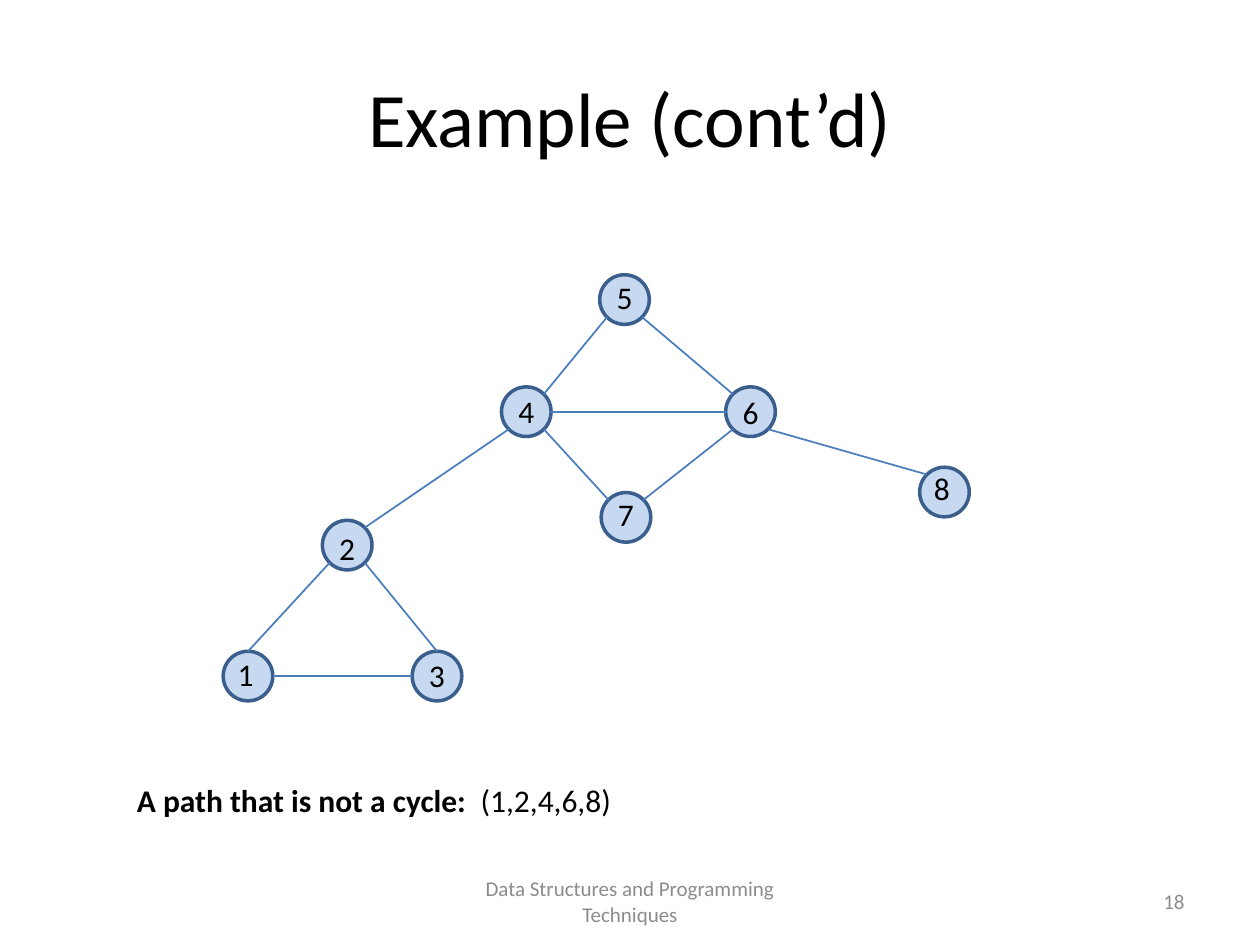
"""Build a slide showing a graph with a path that is not a cycle."""
import math

import pptx
import pptx.enum.shapes
import pptx.enum.text
import pptx.oxml
import pptx.util

Cm = pptx.util.Cm
ALIGN = pptx.enum.text.PP_ALIGN
ANCHOR = pptx.enum.text.MSO_ANCHOR

COLORS = {"node": "C6D9F1", "outline": "3A5F8C", "edge": "4B7EBC", "text": "000000", "footer": "8C8C8C"}
DIAMETER = 1.0
LABEL_HEIGHT = 1.02

NODES = {
    "1": {"at": (4.5, 13.13), "label_shift": (-0.05, -0.05)},
    "2": {"at": (6.5, 10.49), "label_shift": (0, 0.05)},
    "3": {"at": (8.31, 13.13), "label_shift": (0, -0.03)},
    "4": {"at": (10.11, 7.8), "label_shift": (0, -0.03)},
    "5": {"at": (12.09, 5.54), "label_shift": (0, -0.05)},
    "6": {"at": (14.63, 7.8), "label_shift": (0, 0)},
    "7": {"at": (12.12, 9.93), "label_shift": (0, -0.08)},
    "8": {"at": (18.54, 9.42), "label_shift": (-0.05, -0.08)},
}

ANGLES = {
    "right": 0, "lower right": 45, "bottom": 90, "lower left": 135,
    "left": 180, "upper left": 225, "top": 270, "upper right": 315,
}

EDGES = [
    ("4", "lower right", "7", "upper left"),
    ("5", "lower right", "6", "upper left"),
    ("6", "lower right", "8", "upper left"),
    ("5", "lower left", "4", "upper right"),
    ("6", "lower left", "7", "upper right"),
    ("4", "right", "6", "left"),
    ("2", "upper right", "4", "lower left"),
    ("2", "lower left", "1", "top"),
    ("2", "lower right", "3", "top"),
    ("1", "right", "3", "left"),
]

TEXTS = [
    {"at": (1.27, 0.76, 22.86, 3.18), "runs": [("Example (cont’d)", False)],
     "size": 44, "align": ALIGN.CENTER, "anchor": ANCHOR.MIDDLE},
    {"at": (8.68, 17.66, 8.04, 1.01), "runs": [("Data Structures and Programming Techniques", False)],
     "size": 12, "color": "footer", "align": ALIGN.CENTER, "anchor": ANCHOR.MIDDLE},
    {"at": (18.2, 17.66, 5.93, 1.01), "runs": [("18", False)],
     "size": 12, "color": "footer", "align": ALIGN.RIGHT, "anchor": ANCHOR.MIDDLE},
    {"at": (2.51, 15.62, 21.2, LABEL_HEIGHT),
     "runs": [("A path that is not a cycle:  ", True), ("(1,2,4,6,8)", False)]},
]


def rgb(name):
    return pptx.dml.color.RGBColor.from_string(COLORS[name])


def add_text(slide, at, runs, size=18, color="text", align=ALIGN.LEFT, anchor=ANCHOR.TOP):
    frame = slide.shapes.add_textbox(*map(Cm, at)).text_frame
    for name, value in {"word_wrap": True, "vertical_anchor": anchor}.items():
        setattr(frame, name, value)
    paragraph = frame.paragraphs[0]
    paragraph.alignment = align
    for text, bold in runs:
        run = paragraph.add_run()
        run.text = text
        for name, value in {"name": "Calibri", "size": pptx.util.Pt(size), "bold": bold}.items():
            setattr(run.font, name, value)
        run.font.color.rgb = rgb(color)


def add_node(slide, at):
    shape = slide.shapes.add_shape(
        pptx.enum.shapes.MSO_SHAPE.OVAL, *map(Cm, at), Cm(DIAMETER), Cm(DIAMETER))
    shape.shadow.inherit = False
    shape.fill.solid()
    shape.fill.fore_color.rgb = rgb("node")
    shape.line.color.rgb = rgb("outline")
    shape.line.width = pptx.util.Pt(2)


def add_label(slide, text, at, label_shift):
    left, top = (place + shift for place, shift in zip(at, label_shift))
    add_text(slide, (left, top, DIAMETER, LABEL_HEIGHT), [(text, False)], align=ALIGN.CENTER)


def rim_point(node, side):
    angle = math.radians(ANGLES[side])
    left, top = NODES[node]["at"]
    radius = DIAMETER / 2
    return Cm(left + radius * (1 + math.cos(angle))), Cm(top + radius * (1 + math.sin(angle)))


def add_edge(slide, start, start_side, end, end_side):
    connector = slide.shapes.add_connector(
        pptx.enum.shapes.MSO_CONNECTOR.STRAIGHT,
        *rim_point(start, start_side), *rim_point(end, end_side))
    connector.line.color.rgb = rgb("edge")
    connector.line.width = pptx.util.Pt(1)
    properties = connector.element.spPr
    properties.append(properties.makeelement(pptx.oxml.ns.qn("a:effectLst"), {}))


def main():
    presentation = pptx.Presentation()
    presentation.slide_width, presentation.slide_height = Cm(25.4), Cm(19.05)
    slide = presentation.slides.add_slide(presentation.slide_layouts[6])
    for node in NODES.values():
        add_node(slide, node["at"])
    for text, node in NODES.items():
        add_label(slide, text, **node)
    for edge in EDGES:
        add_edge(slide, *edge)
    for text in TEXTS:
        add_text(slide, **text)
    presentation.save("out.pptx")


if __name__ == "__main__":
    main()
